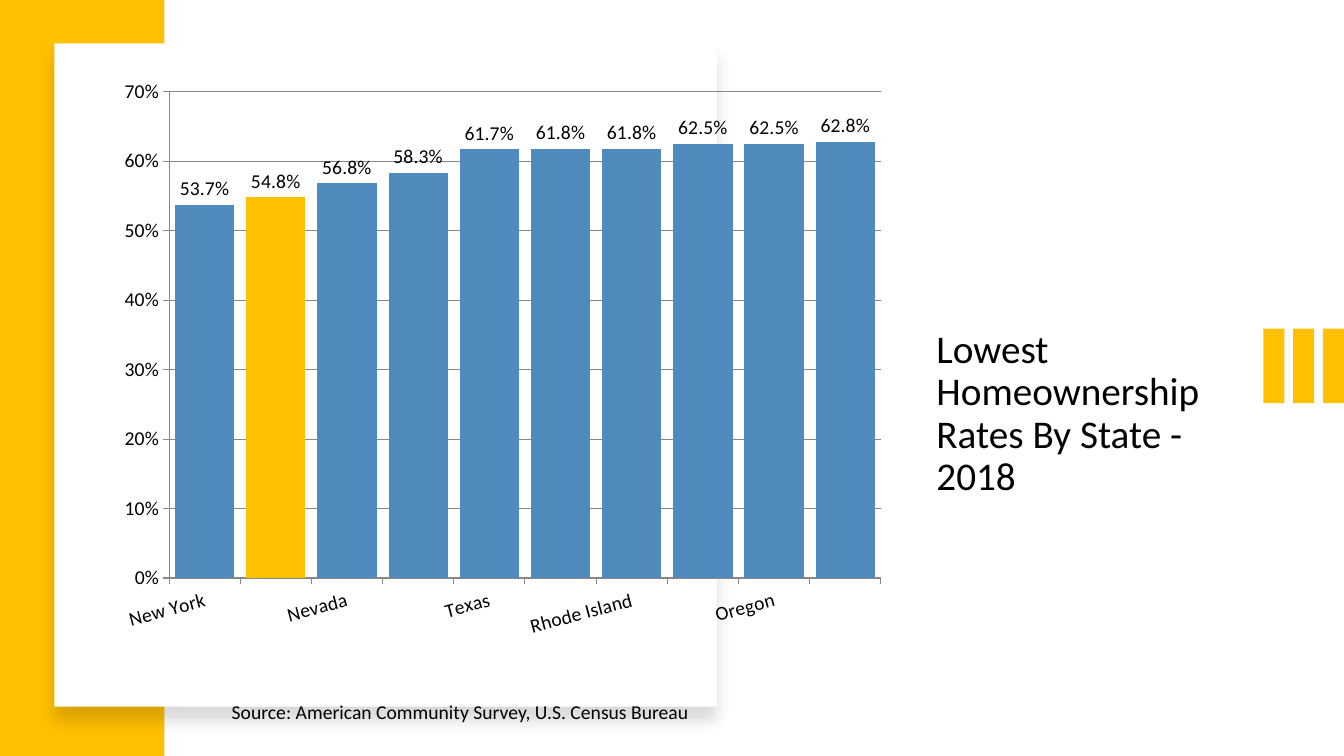
"""Build a slide charting the states with the lowest homeownership rates."""
from lxml.etree import SubElement
from pptx import Presentation
from pptx.chart.data import CategoryChartData
from pptx.dml.color import RGBColor
from pptx.enum.chart import XL_CHART_TYPE, XL_LABEL_POSITION, XL_TICK_MARK
from pptx.enum.shapes import MSO_SHAPE
from pptx.enum.text import MSO_AUTO_SIZE
from pptx.oxml.ns import qn
from pptx.util import Inches, Pt

GOLD = RGBColor(0xFF, 0xC0, 0x00)
BLUE = RGBColor(0x51, 0x8A, 0xBD)
WHITE = RGBColor(0xFF, 0xFF, 0xFF)
BLACK = RGBColor(0x00, 0x00, 0x00)
GRAY = RGBColor(0x88, 0x88, 0x88)

RATES = {
    "New York": 0.537,
    "California": 0.548,
    "Nevada": 0.568,
    "Hawaii": 0.583,
    "Texas": 0.617,
    "Massachusetts": 0.618,
    "Rhode Island": 0.618,
    "North Dakota": 0.625,
    "Oregon": 0.625,
    "Washington": 0.628,
}
HIGHLIGHTED_STATE = "California"


class SlideBuilder:
    """Hold the text style and the current slide."""

    def __init__(self, slide, font_name="Calibri", color=BLACK):
        self.slide = slide
        self.font_name = font_name
        self.color = color

    def style_font(self, font, size):
        font.name = self.font_name
        font.size = Pt(size)
        font.color.rgb = self.color
        font.bold = False

    def text(self, text, left, top, width, height, size, wrap=True, line_spacing=None):
        box = self.slide.shapes.add_textbox(
            Inches(left), Inches(top), Inches(width), Inches(height)
        )
        frame = box.text_frame
        frame.word_wrap = wrap
        frame.auto_size = MSO_AUTO_SIZE.NONE if wrap else MSO_AUTO_SIZE.SHAPE_TO_FIT_TEXT
        para = frame.paragraphs[0]
        para.space_after = Pt(6)
        if line_spacing:
            para.line_spacing = line_spacing
        span = para.add_run()
        span.text = text
        self.style_font(span.font, size)

    def rectangle(self, left, top, width, height, color):
        panel = self.slide.shapes.add_shape(
            MSO_SHAPE.RECTANGLE, Inches(left), Inches(top), Inches(width), Inches(height)
        )
        panel.shadow.inherit = False
        panel.fill.solid()
        panel.fill.fore_color.rgb = color
        panel.line.fill.background()
        return panel

    def card(self, left, top, width, height):
        panel = self.rectangle(left, top, width, height, WHITE)
        effects = panel._element.spPr.find(qn("a:effectLst"))
        shadow = SubElement(
            effects, qn("a:outerShdw"), blurRad=str(Pt(11)), dist=str(Pt(10)),
            dir="5400000", algn="t", rotWithShape="0",
        )
        tint = SubElement(shadow, qn("a:srgbClr"), val=str(BLACK))
        SubElement(tint, qn("a:alpha"), val="15000")

    def style_axis(self, axis):
        axis.major_tick_mark = XL_TICK_MARK.OUTSIDE
        axis.minor_tick_mark = XL_TICK_MARK.NONE
        self.style_line(axis.format.line)
        self.style_font(axis.tick_labels.font, 14)

    def style_line(self, line):
        line.color.rgb = GRAY
        line.width = Pt(0.75)

    def place_plot(self, chart, **fractions):
        plot_area = chart._chartSpace.chart.plotArea
        for old_layout in plot_area.findall(qn("c:layout")):
            plot_area.remove(old_layout)
        layout = SubElement(plot_area, qn("c:layout"))
        plot_area.insert(0, layout)
        manual = SubElement(layout, qn("c:manualLayout"))
        settings = {"layoutTarget": "inner", "xMode": "edge", "yMode": "edge", **fractions}
        for name, value in settings.items():
            SubElement(manual, qn(f"c:{name}"), val=str(value))

    def column_chart(self, rates, highlighted, left, top, width, height):
        data = CategoryChartData(number_format="0.0%")
        data.categories = list(rates)
        data.add_series("Series 1", list(rates.values()))
        chart = self.slide.shapes.add_chart(
            XL_CHART_TYPE.COLUMN_CLUSTERED,
            Inches(left), Inches(top), Inches(width), Inches(height), data,
        ).chart
        chart.has_legend = False
        chart.has_title = False
        self.style_font(chart.font, 18)

        plot = chart.plots[0]
        plot.gap_width = 20
        plot.vary_by_categories = False
        series = plot.series[0]
        point = series.points[list(rates).index(highlighted)]
        for part, color in ((series, BLUE), (point, GOLD)):
            part.format.fill.solid()
            part.format.fill.fore_color.rgb = color
        labels = series.data_labels
        labels.show_value = True
        labels.position = XL_LABEL_POSITION.OUTSIDE_END
        labels.number_format = "0.0%"
        labels.number_format_is_linked = False
        self.style_font(labels.font, 14)

        self.style_axis(chart.category_axis)
        text_properties = chart.category_axis._element.find(qn("c:txPr"))
        text_properties.find(qn("a:bodyPr")).set("rot", "-900000")
        value_axis = chart.value_axis
        self.style_axis(value_axis)
        value_axis.minimum_scale = 0
        value_axis.maximum_scale = 0.7
        value_axis.major_unit = 0.1
        value_axis.tick_labels.number_format = "0%"
        value_axis.tick_labels.number_format_is_linked = False
        self.style_line(value_axis.major_gridlines.format.line)
        self.place_plot(chart, x=0.11, y=0.03, w=0.886, h=0.807)


def main():
    deck = Presentation()
    deck.slide_width = Inches(13.33)
    deck.slide_height = Inches(7.5)
    page = SlideBuilder(deck.slides.add_slide(deck.slide_layouts[6]))

    page.text("Lowest Homeownership Rates By State - 2018",
              9.19, 3.22, 2.93, 2.61, size=28, line_spacing=0.9)
    page.rectangle(0, 0, 1.63, 7.5, GOLD)
    page.card(0.54, 0.43, 6.57, 6.58)
    for index in range(3):
        page.rectangle(12.53 + 0.295 * index, 3.26, 0.21, 0.74, GOLD)
    page.text("Source: American Community Survey, U.S. Census Bureau",
              2.2, 6.89, 4.75, 0.34, size=14, wrap=False)
    page.column_chart(RATES, HIGHLIGHTED_STATE, 0.8, 0.73, 7.97, 5.98)
    deck.save("out.pptx")


if __name__ == "__main__":
    main()
